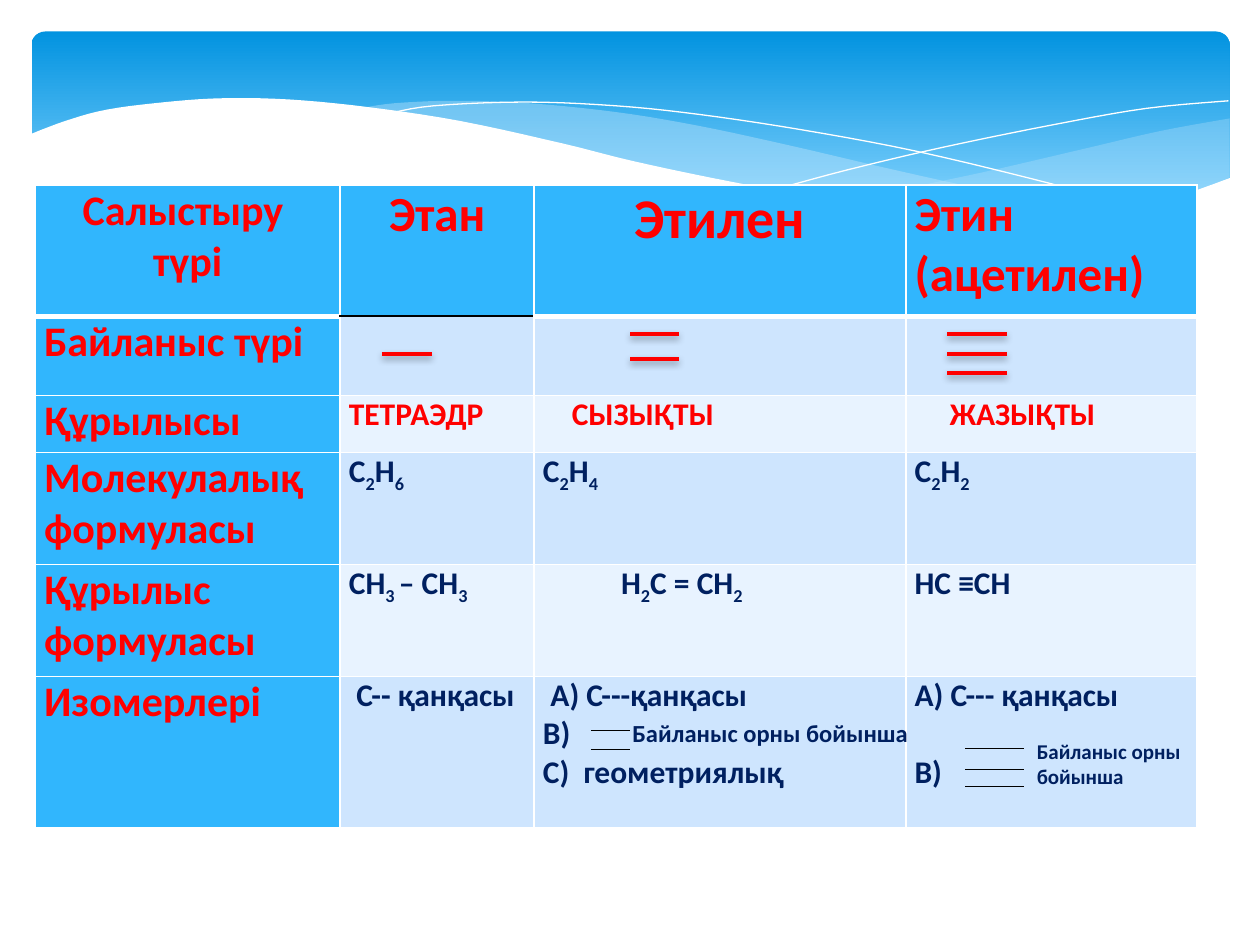
import pptx
import pptx.dml.color
import pptx.enum.dml
import pptx.enum.shapes
import pptx.enum.text
import pptx.oxml
import pptx.oxml.ns
import pptx.util
from pptx.util import Inches, Pt

RGBColor = pptx.dml.color.RGBColor
RED = RGBColor(0xFF, 0x00, 0x00)
NAVY = RGBColor(0x00, 0x20, 0x60)
BLACK = RGBColor(0x00, 0x00, 0x00)
WHITE = RGBColor(0xFF, 0xFF, 0xFF)
SKY = RGBColor(0x31, 0xB6, 0xFD)
BAND_DARK = RGBColor(0xCE, 0xE5, 0xFE)
BAND_LIGHT = RGBColor(0xE8, 0xF3, 0xFF)
BANNER_TOP = RGBColor(0x02, 0x93, 0xE0)
BANNER_BOTTOM = RGBColor(0x83, 0xD3, 0xFE)
MIST = RGBColor(0xC6, 0xE7, 0xFC)

FONT = "Calibri"
CENTER = pptx.enum.text.PP_ALIGN.CENTER
COLUMNS = [2.42, 1.54, 2.95, 2.31]
ROWS = [1.04, 0.63, 0.45, 0.89, 0.89, 1.2]

RIGHT_SWELL = [[(9.76, 0.94), (9.21, 1.04), (8.61, 1.18), (7.79, 1.37), (7.06, 1.52), (6.61, 1.6)],
               [(6.61, 1.6), (7.19, 1.67), (7.81, 1.72), (8.35, 1.72), (8.89, 1.66),
                (9.35, 1.56), (9.76, 1.41)]]
LONG_SWELL = [[(8.93, 1.67), (8.37, 1.59), (7.75, 1.49), (7.06, 1.34), (6.29, 1.16), (5.55, 1.0),
               (4.89, 0.89), (4.2, 0.82), (3.61, 0.8), (3.13, 0.82), (2.86, 0.86)],
              [(2.86, 0.86), (3.42, 0.94), (4.04, 1.06), (4.91, 1.26), (5.66, 1.43), (6.34, 1.56),
               (6.95, 1.65), (7.61, 1.71), (8.18, 1.73), (8.57, 1.71), (8.93, 1.67)]]
FALLING_LINE = [[(3.09, 0.9), (3.44, 0.84), (4.16, 0.81), (4.89, 0.84), (5.56, 0.91),
                 (6.36, 1.03), (7.27, 1.2), (8.31, 1.45), (9.07, 1.66)]]
RISING_LINE = [[(6.13, 1.51), (6.72, 1.35), (7.48, 1.17), (8.36, 0.99), (9.1, 0.86), (9.75, 0.8)]]
WHITE_WAVE = [[(9.77, 1.41), (9.3, 1.57), (8.75, 1.67), (8.09, 1.71), (7.44, 1.68), (6.68, 1.6),
               (5.79, 1.44), (5.03, 1.28), (4.47, 1.14), (3.65, 0.96), (2.92, 0.85), (2.3, 0.79),
               (1.77, 0.78), (1.32, 0.81), (0.85, 0.87), (0.52, 0.96), (0.23, 1.07)],
              [(0.23, 2.24), (9.77, 2.24)]]


def smooth(points, steps=5):
    padded = [points[0]] + points + [points[-1]]
    result = [points[0]]
    for a, b, c, d in zip(padded, padded[1:], padded[2:], padded[3:]):
        for step in range(1, steps + 1):
            t = step / steps
            result.append(tuple(
                0.5 * (2 * q + (r - p) * t + (2 * p - 5 * q + 4 * r - s) * t ** 2
                       + (3 * q - p - 3 * r + s) * t ** 3)
                for p, q, r, s in zip(a, b, c, d)))
    return result


def add_wave(page, curves, color, opacity=100, filled=True):
    points = [(Inches(x), Inches(y)) for curve in curves for x, y in smooth(curve)]
    builder = page.shapes.build_freeform(*points[0], scale=1.0)
    builder.add_line_segments(points[1:], close=filled)
    wave = builder.convert_to_shape()
    wave.shadow.inherit = False
    if not filled:
        wave.fill.background()
        wave.line.color.rgb = color
        wave.line.width = Pt(0)
        return
    wave.line.fill.background()
    wave.fill.solid()
    wave.fill.fore_color.rgb = color
    if opacity < 100:
        tint = wave.element.spPr.find(".//" + pptx.oxml.ns.qn("a:srgbClr"))
        tint.append(xml(f'<a:alpha {{ns}} val="{opacity * 1000}"/>'))


def xml(text):
    return pptx.oxml.parse_xml(text.replace("{ns}", pptx.oxml.ns.nsdecls("a")))


def add_banner(page):
    banner = page.shapes.add_shape(pptx.enum.shapes.MSO_SHAPE.ROUNDED_RECTANGLE,
                                   Inches(0.25), Inches(0.25), Inches(9.51), Inches(1.56))
    banner.adjustments[0] = 0.07
    banner.shadow.inherit = False
    banner.line.fill.background()
    banner.fill.gradient()
    banner.fill.gradient_angle = 270
    for stop, color, position in zip(banner.fill.gradient_stops, (BANNER_TOP, BANNER_BOTTOM), (0, 0.9)):
        stop.color.rgb = color
        stop.position = position


def add_text(para, text, size, color):
    for index, piece in enumerate(text.split("|")):
        if not piece:
            continue
        span = para.add_run()
        span.text = piece
        span.font.name = FONT
        span.font.size = Pt(size)
        span.font.bold = True
        span.font.color.rgb = color
        if index % 2:
            span.font._element.set("baseline", "-25000")


def fill_frame(frame, lines, size, color, align=None, indents=(), gaps=()):
    for index, line in enumerate(lines):
        para = frame.paragraphs[0] if index == 0 else frame.add_paragraph()
        para.alignment = align
        if index < len(indents):
            para._p.get_or_add_pPr().set("marL", str(Inches(indents[index])))
        if index < len(gaps):
            para.space_before = Pt(gaps[index])
        add_text(para, line, size, color)


def set_borders(cell, row, column):
    rule = (BLACK, 1) if column == 1 else (WHITE, 3)
    thin = (WHITE, 1)
    borders = {"L": thin, "R": thin, "T": rule if row == 1 else thin, "B": rule if row == 0 else thin}
    properties = cell._tc.get_or_add_tcPr()
    for side, (color, width) in borders.items():
        properties.append(xml(
            f'<a:ln{side} {{ns}} w="{Pt(width)}"><a:solidFill><a:srgbClr val="{color}"/>'
            f'</a:solidFill></a:ln{side}>'))


def add_comparison(page):
    heads = ["Байланыс түрі", "Құрылысы", "Молекулалық формуласы", "Құрылыс формуласы", "Изомерлері"]
    contents = {
        (0, 0): dict(lines=["Салыстыру ", "түрі"], size=24, color=RED, align=CENTER),
        (0, 1): dict(lines=["Этан"], size=28, color=RED, align=CENTER),
        (0, 2): dict(lines=["Этилен"], size=32, color=RED, align=CENTER),
        (0, 3): dict(lines=["Этин (ацетилен)"], size=28, color=RED),
        (2, 1): dict(lines=["ТЕТРАЭДР"], color=RED),
        (2, 2): dict(lines=["СЫЗЫҚТЫ"], color=RED, indents=[0.23]),
        (2, 3): dict(lines=["ЖАЗЫҚТЫ"], color=RED, indents=[0.28]),
        (3, 1): dict(lines=["С|2|Н|6"]),
        (3, 2): dict(lines=["С|2|Н|4"]),
        (3, 3): dict(lines=["С|2|Н|2"]),
        (4, 1): dict(lines=["СН|3 |– СН|3"]),
        (4, 2): dict(lines=["Н|2|С = СН|2"], indents=[0.62]),
        (4, 3): dict(lines=["НС ≡СН"]),
        (5, 1): dict(lines=["С-- қанқасы"], indents=[0.06]),
        (5, 2): dict(lines=["А) С---қанқасы", "В)", "С)  геометриялық"], indents=[0.06]),
        (5, 3): dict(lines=["А) С--- қанқасы", "В)"], gaps=[0, 22]),
    }
    for row, head in enumerate(heads, start=1):
        contents[row, 0] = dict(lines=[head], size=24, color=RED)
    table = page.shapes.add_table(len(ROWS), len(COLUMNS), Inches(0.28), Inches(1.47),
                                  Inches(sum(COLUMNS)), Inches(sum(ROWS))).table
    for column, width in zip(table.columns, COLUMNS):
        column.width = Inches(width)
    for row, height in enumerate(ROWS):
        table.rows[row].height = Inches(height)
        for column in range(len(COLUMNS)):
            cell = table.cell(row, column)
            cell.margin_left = cell.margin_right = Inches(0.07)
            cell.margin_top = cell.margin_bottom = 0
            set_borders(cell, row, column)
            cell.fill.solid()
            band = BAND_DARK if row % 2 or row == 3 else BAND_LIGHT
            cell.fill.fore_color.rgb = SKY if row == 0 or column == 0 else band
            if (row, column) in contents:
                fill_frame(cell.text_frame, **{"size": 18, "color": NAVY, **contents[row, column]})


def add_bonds(page, left, right, heights, color, width, shadow=""):
    for y in heights:
        bond = page.shapes.add_connector(pptx.enum.shapes.MSO_CONNECTOR.STRAIGHT,
                                         Inches(left), Inches(y), Inches(right), Inches(y))
        bond.line.color.rgb = color
        bond.line.width = Pt(width)
        bond._element.spPr.append(xml(f"<a:effectLst {{ns}}>{shadow}</a:effectLst>"))


def add_label(page, left, top, width, height, lines, size):
    box = page.shapes.add_textbox(Inches(left), Inches(top), Inches(width), Inches(height))
    box.text_frame.word_wrap = False
    fill_frame(box.text_frame, lines, size, NAVY)


def main():
    deck = pptx.Presentation()
    deck.slide_width, deck.slide_height = Inches(10), Inches(7.5)
    page = deck.slides.add_slide(deck.slide_layouts[6])
    add_banner(page)
    add_wave(page, RIGHT_SWELL, MIST, opacity=29)
    add_wave(page, LONG_SWELL, MIST, opacity=40)
    add_wave(page, FALLING_LINE, WHITE, filled=False)
    add_wave(page, RISING_LINE, WHITE, filled=False)
    add_wave(page, WHITE_WAVE, WHITE)
    add_comparison(page)
    shadow = (f'<a:outerShdw blurRad="{Pt(4)}" dist="{Pt(2)}" dir="5400000" rotWithShape="0">'
              '<a:srgbClr val="000000"><a:alpha val="38000"/></a:srgbClr></a:outerShdw>')
    add_bonds(page, 7.52, 7.99, [2.65, 2.81, 2.96], RED, 2, shadow)
    add_bonds(page, 3.03, 3.43, [2.81], RED, 2, shadow)
    add_bonds(page, 5, 5.39, [2.65, 2.85], RED, 2, shadow)
    add_bonds(page, 4.69, 5, [5.8, 5.95], BLACK, 0.75)
    add_label(page, 4.92, 5.65, 2.39, 0.57, ["Байланыс орны бойынша"], 14)
    add_bonds(page, 7.66, 8.13, [5.94, 6.11, 6.24], BLACK, 0.75)
    add_label(page, 8.13, 5.81, 1.38, 0.68, ["Байланыс орны", "бойынша"], 12)
    deck.save("out.pptx")


if __name__ == "__main__":
    main()
